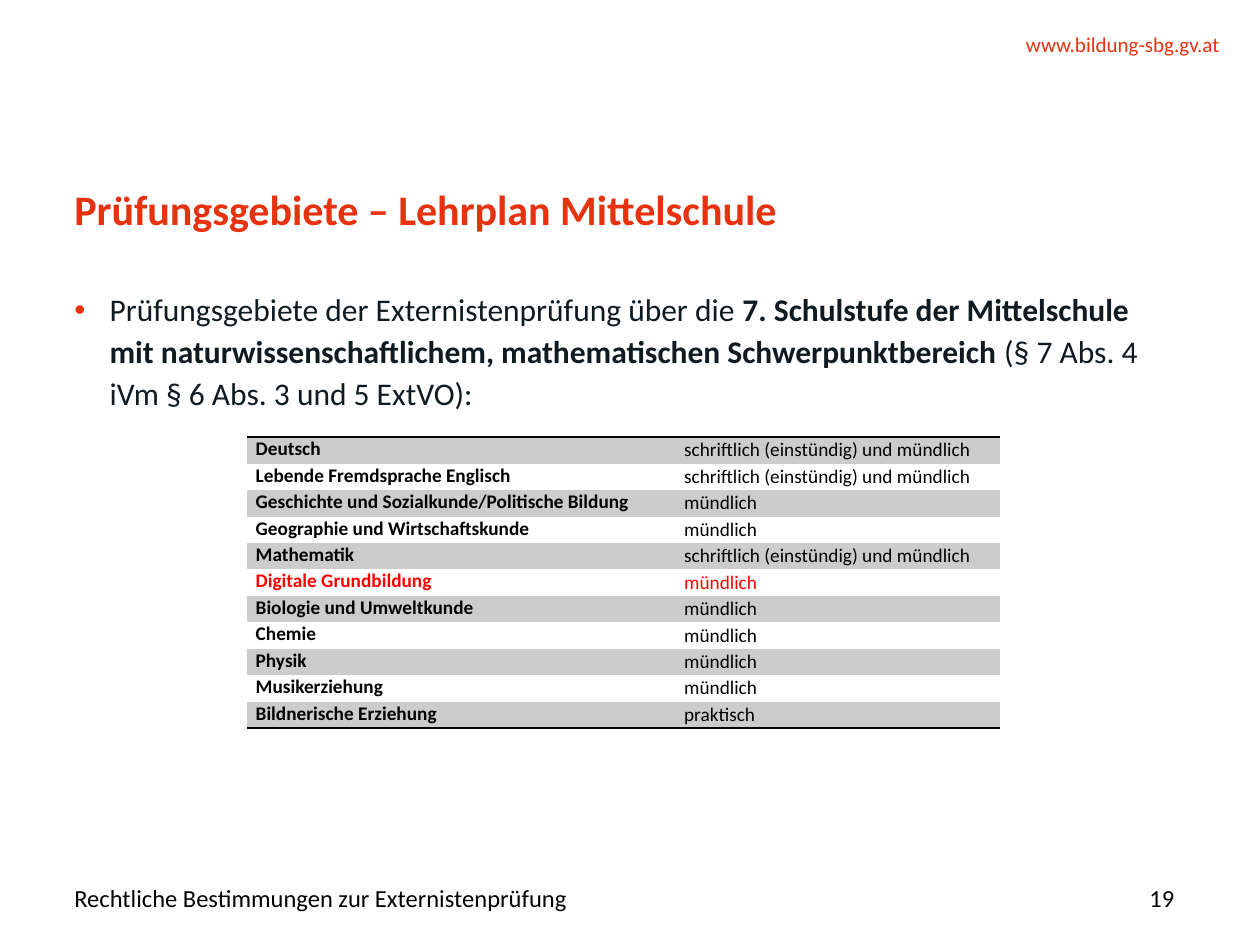
from lxml import etree
from pptx import Presentation
from pptx.dml.color import RGBColor
from pptx.enum.text import MSO_ANCHOR, PP_ALIGN
from pptx.oxml.ns import qn
from pptx.util import Inches, Pt

LEFT, RIGHT = PP_ALIGN.LEFT, PP_ALIGN.RIGHT
TOP, MIDDLE = MSO_ANCHOR.TOP, MSO_ANCHOR.MIDDLE
ACCENT = RGBColor(0xE6, 0x32, 0x0F)
INK = RGBColor(0x0F, 0x1B, 0x20)
BLACK = RGBColor(0, 0, 0)
RED = RGBColor(0xFF, 0, 0)
BAND = RGBColor(0xCC, 0xCC, 0xCC)
FONT = "Calibri"
NO_STYLE = "{2D5ABB26-0587-4C30-8999-92F81FD0307C}"

WEBSITE = "www.bildung-sbg.gv.at"
TITLE = "Prüfungsgebiete – Lehrplan Mittelschule"
BODY = [  # text, bold
    ("Prüfungsgebiete der Externistenprüfung über die ", False),
    ("7. Schulstufe der Mittelschule mit naturwissenschaftlichem, "
     "mathematischen Schwerpunktbereich ", True),
    ("(§ 7 Abs. 4 iVm § 6 Abs. 3 und 5 ExtVO):", False),
]
FOOTER = "Rechtliche Bestimmungen zur Externistenprüfung"
PAGE = "19"

ORAL = "mündlich"
BOTH = "schriftlich (einstündig) und mündlich"
SUBJECTS = [
    ("Deutsch", BOTH),
    ("Lebende Fremdsprache Englisch", BOTH),
    ("Geschichte und Sozialkunde/Politische Bildung", ORAL),
    ("Geographie und Wirtschaftskunde", ORAL),
    ("Mathematik", BOTH),
    ("Digitale Grundbildung", ORAL),
    ("Biologie und Umweltkunde", ORAL),
    ("Chemie", ORAL),
    ("Physik", ORAL),
    ("Musikerziehung", ORAL),
    ("Bildnerische Erziehung", "praktisch"),
]
HIGHLIGHT = "Digitale Grundbildung"
COL_WIDTHS = (3.42, 2.56)
CELL_INSETS = ((0.07, 0), (0.05, 0.01))  # horizontal, vertical per column
ROW_HEIGHT = 0.21


def add_run(p, text, size, color, bold=False):
    r = p.add_run()
    r.text = text
    r.font.name = FONT
    r.font.size = Pt(size)
    r.font.bold = bold
    r.font.color.rgb = color


def add_text(s, box, align=LEFT, anchor=TOP, wrap=True):
    """Add a text box without insets and return its first paragraph."""
    tf = s.shapes.add_textbox(*map(Inches, box)).text_frame
    tf.margin_left = tf.margin_top = tf.margin_right = tf.margin_bottom = 0
    tf.word_wrap = wrap
    tf.vertical_anchor = anchor
    p = tf.paragraphs[0]
    p.alignment = align
    return p


def add_bullet(p, indent, color):
    pPr = p._p.get_or_add_pPr()
    pPr.set("marL", str(Inches(indent)))
    pPr.set("indent", str(-Inches(indent)))
    clr = etree.SubElement(pPr, qn("a:buClr"))
    etree.SubElement(clr, qn("a:srgbClr"), val=str(color))
    etree.SubElement(pPr, qn("a:buFont"), typeface="Arial")
    etree.SubElement(pPr, qn("a:buChar"), char="•")


def add_border(cell, side):
    ln = etree.Element(qn(f"a:ln{side}"), w=str(Pt(1)))
    fill = etree.SubElement(ln, qn("a:solidFill"))
    etree.SubElement(fill, qn("a:srgbClr"), val=str(BLACK))
    cell._tc.get_or_add_tcPr().insert(0, ln)


def add_subject_table(s):
    rows = len(SUBJECTS)
    table = s.shapes.add_table(
        rows, len(COL_WIDTHS), Inches(1.96), Inches(3.47),
        Inches(sum(COL_WIDTHS)), Inches(ROW_HEIGHT * rows)).table
    table.first_row = table.horz_banding = False
    table._tbl.tblPr.find(qn("a:tableStyleId")).text = NO_STYLE
    for col, width in zip(table.columns, COL_WIDTHS):
        col.width = Inches(width)
    for i, subject in enumerate(SUBJECTS):
        table.rows[i].height = Inches(ROW_HEIGHT)
        color = RED if subject[0] == HIGHLIGHT else BLACK
        for j, text in enumerate(subject):
            cell = table.cell(i, j)
            across, down = CELL_INSETS[j]
            cell.margin_left = cell.margin_right = Inches(across)
            cell.margin_top = cell.margin_bottom = Inches(down)
            if i % 2 == 0:
                cell.fill.solid()
                cell.fill.fore_color.rgb = BAND
            else:
                cell.fill.background()
            if i == 0:
                add_border(cell, "T")
            if i == rows - 1:
                add_border(cell, "B")
            add_run(cell.text_frame.paragraphs[0], text, 11, color, j == 0)


def main():
    prs = Presentation()
    prs.slide_width, prs.slide_height = Inches(10), Inches(7.5)
    s = prs.slides.add_slide(prs.slide_layouts[6])

    add_run(add_text(s, (7.27, 0.25, 2.41, 0.2), RIGHT), WEBSITE, 12, ACCENT)

    p = add_text(s, (0.59, 1.44, 8.73, 0.91), wrap=False)
    p.line_spacing = Pt(30)
    add_run(p, TITLE, 24, ACCENT, True)

    p = add_text(s, (0.59, 2.27, 8.73, 4.29))
    add_bullet(p, 0.28, ACCENT)
    p.line_spacing = Pt(24)
    p.space_after = Pt(14.2)
    for text, bold in BODY:
        add_run(p, text, 18, INK, bold)

    add_subject_table(s)

    add_run(add_text(s, (0.59, 6.98, 7.52, 0.29), LEFT, MIDDLE),
            FOOTER, 14, BLACK)
    add_run(add_text(s, (8.43, 6.98, 0.89, 0.29), RIGHT, MIDDLE),
            PAGE, 14, BLACK)

    prs.save("out.pptx")


if __name__ == "__main__":
    main()
